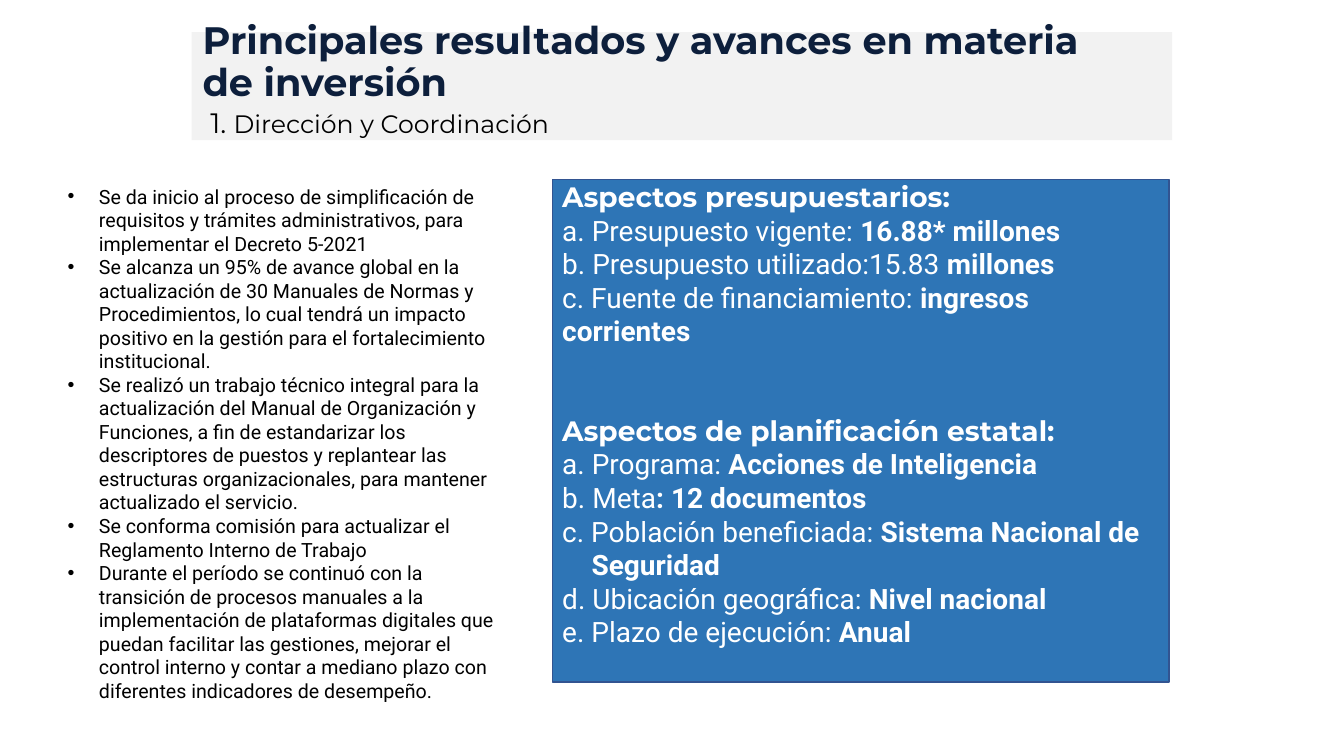
from pptx import Presentation
from pptx.enum.shapes import MSO_SHAPE
from pptx.enum.text import MSO_ANCHOR, MSO_AUTO_SIZE, PP_ALIGN
from pptx.dml.color import RGBColor
from pptx.util import Cm, Pt

RECTANGLE = MSO_SHAPE.RECTANGLE
TOP, MIDDLE = MSO_ANCHOR.TOP, MSO_ANCHOR.MIDDLE
NO_AUTOFIT = MSO_AUTO_SIZE.NONE
LEFT = PP_ALIGN.LEFT

COLOURS = {
    "band": "F2F2F2",
    "title": "0D1F3C",
    "black": "000000",
    "white": "FFFFFF",
    "panel": "2E75B6",
    "panel_edge": "325491",
}
HEADING_FONT, BODY_FONT = "Montserrat", "Roboto"

ACHIEVEMENTS = [
    "Se da inicio al proceso de simplificación de requisitos y trámites "
    "administrativos, para implementar el Decreto 5-2021",
    "Se alcanza un 95% de avance global en la actualización de 30 Manuales de "
    "Normas y Procedimientos, lo cual tendrá un impacto positivo en la gestión "
    "para el fortalecimiento institucional.",
    "Se realizó un trabajo técnico integral para la actualización del Manual de "
    "Organización y Funciones, a fin de estandarizar los descriptores de puestos "
    "y replantear las estructuras organizacionales, para mantener actualizado el "
    "servicio.",
    "Se conforma comisión para actualizar el Reglamento Interno de Trabajo",
    "Durante el período se continuó con la transición de procesos manuales a la "
    "implementación de plataformas digitales que puedan facilitar las gestiones, "
    "mejorar el control interno y contar a mediano plazo con diferentes "
    "indicadores de desempeño.",
]
ASPECTS = [
    ("Aspectos presupuestarios:", [
        ("a. Presupuesto vigente: ", "16.88* millones", 0),
        ("b. Presupuesto utilizado:15.83 ", "millones", 0),
        ("c. Fuente de financiamiento: ", "ingresos corrientes", 0),
    ]),
    ("Aspectos de planificación estatal:", [
        ("a. Programa: ", "Acciones de Inteligencia", 0),
        ("b. Meta", ": 12 documentos", 0),
        ("c. Población beneficiada: ", "Sistema Nacional de Seguridad", 0.74),
        ("d. Ubicación geográfica: ", "Nivel nacional", 0),
        ("e. Plazo de ejecución: ", "Anual", 0),
    ]),
]


def colour(key):
    return RGBColor.from_string(COLOURS[key])


def place(shape, left, top, width, height):
    shape.left, shape.top = Cm(left), Cm(top)
    shape.width, shape.height = Cm(width), Cm(height)


def paint(shape, fill, edge=None):
    shape.fill.solid()
    shape.fill.fore_color.rgb = colour(fill)
    if edge:
        shape.line.color.rgb = colour(edge)
        shape.line.width = Pt(1)
    else:
        shape.line.fill.background()


def add_box(slide, bounds, fill, edge=None):
    box = slide.shapes.add_shape(RECTANGLE, *map(Cm, bounds))
    box.shadow.inherit = False
    paint(box, fill, edge)
    return box


def set_frame(shape, anchor):
    frame = shape.text_frame
    frame.word_wrap = True
    frame.auto_size = NO_AUTOFIT
    frame.vertical_anchor = anchor
    return frame


def next_paragraph(frame, first, hanging=0, before=0, spacing=1.0):
    paragraph = frame.paragraphs[0] if first else frame.add_paragraph()
    paragraph.alignment = LEFT
    paragraph.line_spacing = spacing
    paragraph.space_before = Pt(before)
    properties = paragraph._p.get_or_add_pPr()
    properties.set("marL", str(Cm(hanging)))
    properties.set("indent", str(-Cm(hanging)))
    return paragraph


def add_text(paragraph, text, size=20, font=BODY_FONT, ink="black", bold=False):
    run = paragraph.add_run()
    run.text = text
    run.font.size = Pt(size)
    run.font.name = font
    run.font.bold = bold
    run.font.color.rgb = colour(ink)


def add_heading(slide):
    band = add_box(slide, (4.83, 0.81, 24.71, 2.72), "band")
    slide.shapes.element.insert(2, band.element)

    title = slide.shapes.title
    place(title, 4.85, 0, 22.71, 3.18)
    title_line = next_paragraph(set_frame(title, MIDDLE), True, spacing=0.9)
    add_text(title_line, "Principales resultados y avances en materia de inversión",
             size=27.3, font=HEADING_FONT, ink="title", bold=True)

    section = slide.shapes.add_textbox(Cm(5.05), Cm(2.62), Cm(13.49), Cm(1.02))
    section_line = next_paragraph(set_frame(section, TOP), True, spacing=0.9)
    add_text(section_line, "1. ", font=HEADING_FONT)
    add_text(section_line, "Dirección y Coordinación", size=18, font=HEADING_FONT)


def add_achievements(slide):
    body = slide.placeholders[1]
    place(body, 1.45, 4.52, 11.38, 13.41)
    paint(body, "white", "white")
    frame = set_frame(body, TOP)
    for index, achievement in enumerate(ACHIEVEMENTS):
        paragraph = next_paragraph(frame, index == 0, hanging=0.79)
        add_text(paragraph, achievement, size=14)


def add_aspects(slide):
    panel = add_box(slide, (13.92, 4.52, 15.54, 12.67), "panel", "panel_edge")
    frame = set_frame(panel, MIDDLE)
    frame.margin_bottom = Cm(0.97)
    for index, (heading, items) in enumerate(ASPECTS):
        paragraph = next_paragraph(frame, index == 0, before=47 * index)
        add_text(paragraph, heading, font=HEADING_FONT, ink="white", bold=True)
        for label, value, hanging in items:
            paragraph = next_paragraph(frame, False, hanging=hanging)
            add_text(paragraph, label, ink="white")
            add_text(paragraph, value, ink="white", bold=True)


def main():
    """Build the slide on investment results and save it."""
    presentation = Presentation()
    presentation.slide_width, presentation.slide_height = Cm(33.87), Cm(19.05)
    slide = presentation.slides.add_slide(presentation.slide_layouts[1])
    add_heading(slide)
    add_achievements(slide)
    add_aspects(slide)
    presentation.save("out.pptx")


if __name__ == "__main__":
    main()
